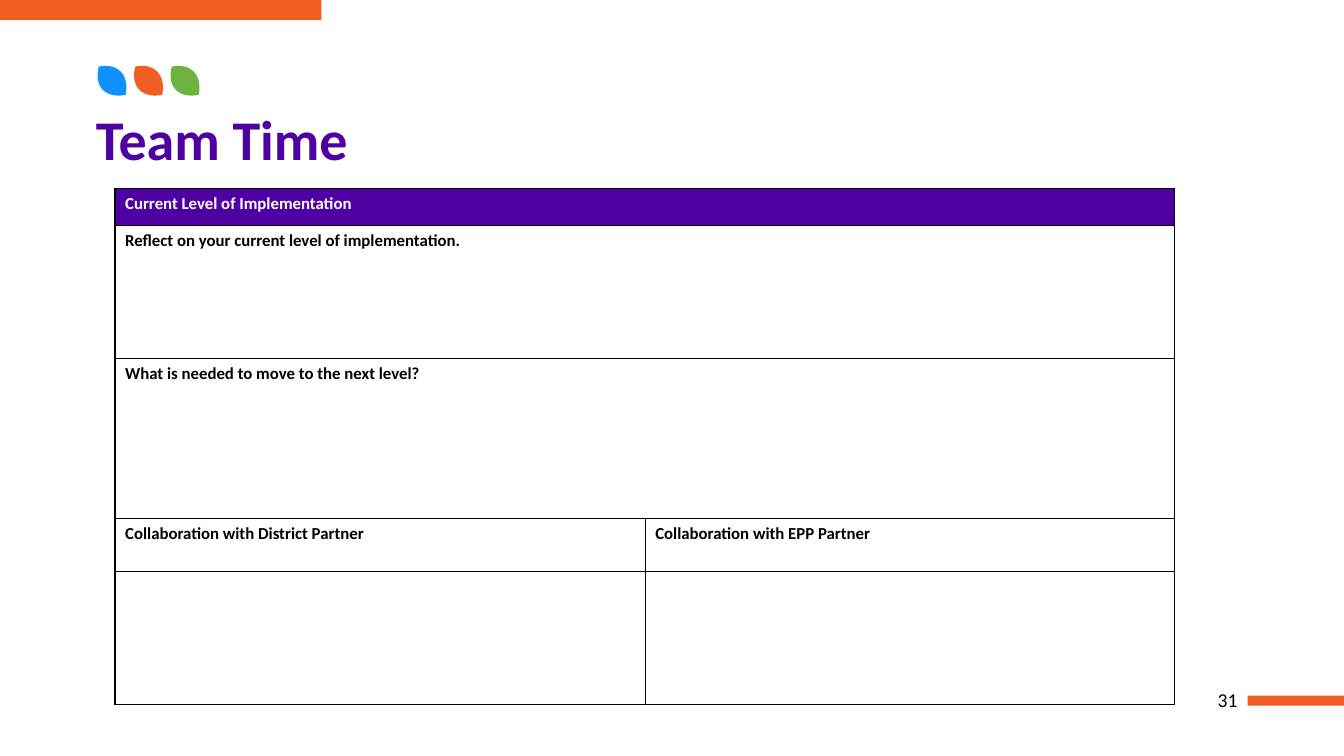
"""Build the Team Time worksheet slide."""
from lxml import etree
from pptx import Presentation
from pptx.dml.color import RGBColor
from pptx.enum.shapes import MSO_SHAPE
from pptx.enum.text import MSO_ANCHOR, MSO_AUTO_SIZE, PP_ALIGN
from pptx.oxml.ns import qn
from pptx.util import Cm, Pt

RECTANGLE = MSO_SHAPE.RECTANGLE
MIDDLE = MSO_ANCHOR.MIDDLE
NO_AUTOFIT = MSO_AUTO_SIZE.NONE
LEFT, RIGHT = PP_ALIGN.LEFT, PP_ALIGN.RIGHT

PURPLE = RGBColor(0x4F, 0x00, 0xA3)
ORANGE = RGBColor(0xF1, 0x5D, 0x22)
BLUE = RGBColor(0x0D, 0x92, 0xFF)
GREEN = RGBColor(0x6C, 0xB3, 0x3F)
BLACK = RGBColor(0, 0, 0)
WHITE = RGBColor(0xFF, 0xFF, 0xFF)

TITLE = "Team Time"
PAGE_NUMBER = "31"
WORKSHEET = [
    ["Current Level of Implementation"],
    ["Reflect on your current level of implementation."],
    ["What is needed to move to the next level?"],
    ["Collaboration with District Partner", "Collaboration with EPP Partner"],
    ["", ""],
]
ROW_HEIGHTS = [0.94, 3.35, 4.03, 1.34, 3.35]
COLUMN_WIDTHS = [13.36, 13.34]
BARS = [(0, 0, 8.1, 0.5), (31.44, 17.53, 2.43, 0.25)]
LEAF_COLOURS = [BLUE, ORANGE, GREEN]
LEAF_LEFT, LEAF_TOP, LEAF_STEP = 2.49, 1.68, 0.92
LEAF_CURVES = [
    [(0, 0), (-0.13, 0.51), (0.18, 0.81), (0.68, 0.71)],
    [(0.68, 0.71), (0.78, 0.2), (0.47, -0.1), (0, 0)],
]
CURVE_STEPS = 20


def write(frame, text, size, colour, bold=False, align=LEFT):
    """Put formatted text in the first paragraph of a frame."""
    para = frame.paragraphs[0]
    para.alignment = align
    span = para.add_run()
    span.text = text
    span.font.name = "Calibri"
    span.font.size = Pt(size)
    span.font.bold = bold
    span.font.color.rgb = colour
    return para


def paint(shape, colour):
    """Give a shape a flat fill without line or shadow."""
    shape.shadow.inherit = False
    shape.fill.solid()
    shape.fill.fore_color.rgb = colour
    shape.line.fill.background()


def curve_point(curve, t):
    """Return the point of a cubic curve at t."""
    weights = [(1 - t) ** 3, 3 * t * (1 - t) ** 2, 3 * t**2 * (1 - t), t**3]
    return [sum(w * point[axis] for w, point in zip(weights, curve))
            for axis in (0, 1)]


def add_leaf(page, left, colour):
    """Draw one leaf from its two curved sides."""
    points = [curve_point(curve, step / CURVE_STEPS)
              for curve in LEAF_CURVES for step in range(CURVE_STEPS)]
    outline = [(Cm(left + x), Cm(LEAF_TOP + y)) for x, y in points]
    builder = page.shapes.build_freeform(*outline[0])
    builder.add_line_segments(outline[1:], close=True)
    paint(builder.convert_to_shape(), colour)


def add_borders(cell):
    """Draw a thin black line on each side of a cell."""
    properties = cell._tc.get_or_add_tcPr()
    for side in ("a:lnL", "a:lnR", "a:lnT", "a:lnB"):
        line = etree.SubElement(properties, qn(side), w=str(Pt(1)))
        fill = etree.SubElement(line, qn("a:solidFill"))
        etree.SubElement(fill, qn("a:srgbClr"), val=str(BLACK))


def add_worksheet(page):
    """Add the table, joining the columns of one-entry rows."""
    table = page.shapes.add_table(
        len(WORKSHEET), len(COLUMN_WIDTHS), Cm(2.9), Cm(4.75),
        Cm(sum(COLUMN_WIDTHS)), Cm(sum(ROW_HEIGHTS))).table
    table.first_row = table.horz_banding = False
    for column, width in zip(table.columns, COLUMN_WIDTHS):
        column.width = Cm(width)
    for index, (entries, height) in enumerate(zip(WORKSHEET, ROW_HEIGHTS)):
        row = table.rows[index]
        row.height = Cm(height)
        if len(entries) == 1:
            table.cell(index, 0).merge(table.cell(index, 1))
        for cell in row.cells:
            add_borders(cell)
            cell.fill.solid()
            cell.fill.fore_color.rgb = WHITE if index else PURPLE
        for cell, text in zip(row.cells, entries):
            if text:
                write(cell.text_frame, text, 12,
                      BLACK if index else WHITE, bold=True)


def main():
    """Compose and save the slide."""
    deck = Presentation()
    deck.slide_width, deck.slide_height = Cm(33.87), Cm(19.05)
    page = deck.slides.add_slide(deck.slide_layouts.get_by_name("Title Only"))

    for bar in BARS:
        paint(page.shapes.add_shape(RECTANGLE, *map(Cm, bar)), ORANGE)
    for index, colour in enumerate(LEAF_COLOURS):
        add_leaf(page, LEAF_LEFT + index * LEAF_STEP, colour)

    number = page.shapes.add_textbox(Cm(29.26), Cm(17.27), Cm(2.18), Cm(0.71))
    number.text_frame.word_wrap = True
    number.text_frame.vertical_anchor = MIDDLE
    write(number.text_frame, PAGE_NUMBER, 14, BLACK, align=RIGHT)

    title = page.shapes.title
    title.left, title.top = Cm(2.16), Cm(2.69)
    title.width, title.height = Cm(29), Cm(1.78)
    title.text_frame.auto_size = NO_AUTOFIT
    title.text_frame.vertical_anchor = MIDDLE
    write(title.text_frame, TITLE, 40, PURPLE, bold=True).line_spacing = 0.9

    add_worksheet(page)
    deck.save("out.pptx")


if __name__ == "__main__":
    main()
